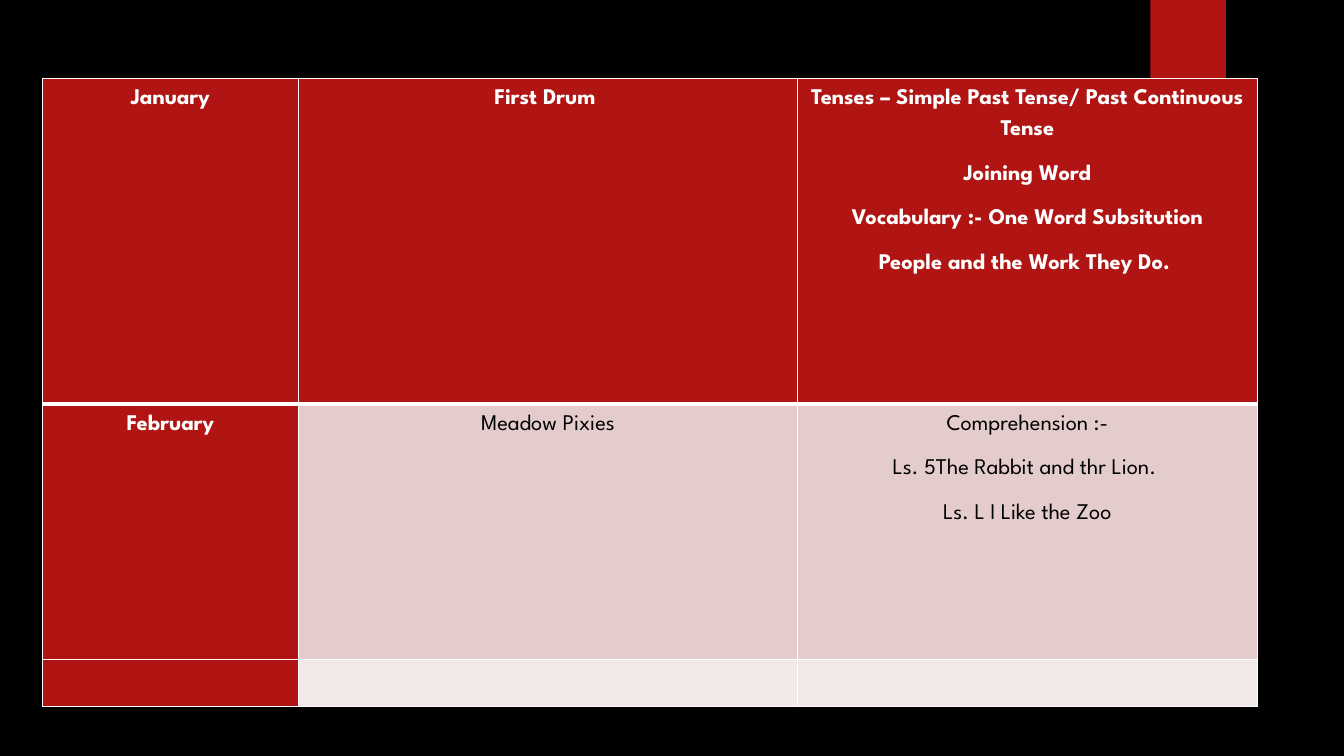
"""Build a slide with a monthly lesson table on black."""
from dataclasses import dataclass

from lxml.etree import SubElement
from pptx import Presentation
from pptx.dml.color import RGBColor
from pptx.dml.fill import FillFormat
from pptx.enum.shapes import MSO_SHAPE
from pptx.enum.text import PP_ALIGN
from pptx.oxml.ns import qn
from pptx.slide import Slide
from pptx.table import _Cell
from pptx.util import Inches, Pt

RED, WHITE, BLACK = "B01513", "FFFFFF", "000000"
FONT = "League Spartan"
WIDTHS = (2.54, 4.95, 4.56)


@dataclass
class Month:
    height: float
    texts: tuple[str, str, str]
    fill: str
    ink: str
    bold: bool
    top: float = 1
    base: float = 1


MONTHS = (
    Month(3.23, ("January", "First Drum ",
                 "Tenses – Simple Past Tense/ Past Continuous Tense\nJoining Word\n"
                 "Vocabulary :- One Word Subsitution\nPeople and the Work They Do. "),
          RED, WHITE, True, base=3),
    Month(2.53, ("February", "Meadow Pixies",
                 "Comprehension :-\nLs. 5The Rabbit and thr Lion. \nLs. L I Like the Zoo"),
          "E4CCCC", BLACK, False, top=3),
    Month(0.47, ("", "", ""), "F2E8E7", BLACK, False),
)


def color(text: str) -> RGBColor:
    return RGBColor.from_string(text)


def paint(fill: FillFormat, tint: str) -> None:
    fill.solid()
    fill.fore_color.rgb = color(tint)


def edge(cell: _Cell, top: float, base: float) -> None:
    props = cell._tc.get_or_add_tcPr()
    for tag, width in (("lnL", 1), ("lnR", 1), ("lnT", top), ("lnB", base)):
        line = SubElement(props, qn(f"a:{tag}"), w=str(Pt(width)))
        solid = SubElement(line, qn("a:solidFill"))
        SubElement(solid, qn("a:srgbClr"), val=WHITE)


def write(cell: _Cell, text: str, ink: str, bold: bool) -> None:
    cell.margin_left = cell.margin_right = Inches(0.07)
    cell.margin_top = cell.margin_bottom = 0
    cell.text_frame.text = text
    for para in cell.text_frame.paragraphs:
        para.alignment = PP_ALIGN.CENTER
        para.line_spacing = 1.5
        para.space_after = Pt(10)
        para.font.size = Pt(16)
        for run in para.runs:
            run.font.name = FONT
            run.font.size = Pt(16)
            run.font.bold = bold
            run.font.color.rgb = color(ink)


def add_bar(slide: Slide) -> None:
    bar = slide.shapes.add_shape(MSO_SHAPE.RECTANGLE, Inches(11.41), 0,
                                 Inches(0.75), Inches(1.25))
    bar.shadow.inherit = False
    paint(bar.fill, RED)
    bar.line.fill.background()


def add_plan(slide: Slide) -> None:
    height = sum(month.height for month in MONTHS)
    frame = slide.shapes.add_table(len(MONTHS), len(WIDTHS), Inches(0.42), Inches(0.78),
                                   Inches(sum(WIDTHS)), Inches(height))
    table = frame.table
    table.first_col = True
    for col, width in zip(table.columns, WIDTHS):
        col.width = Inches(width)
    for row, month in zip(table.rows, MONTHS):
        row.height = Inches(month.height)
        for place, (cell, text) in enumerate(zip(row.cells, month.texts)):
            first = place == 0
            edge(cell, month.top, month.base)
            paint(cell.fill, RED if first else month.fill)
            write(cell, text, WHITE if first else month.ink, first or month.bold)


def main() -> None:
    deck = Presentation()
    deck.slide_width, deck.slide_height = Inches(13.33), Inches(7.5)
    slide = deck.slides.add_slide(deck.slide_layouts[6])
    paint(slide.background.fill, BLACK)
    add_bar(slide)
    add_plan(slide)
    deck.save("out.pptx")


if __name__ == "__main__":
    main()
